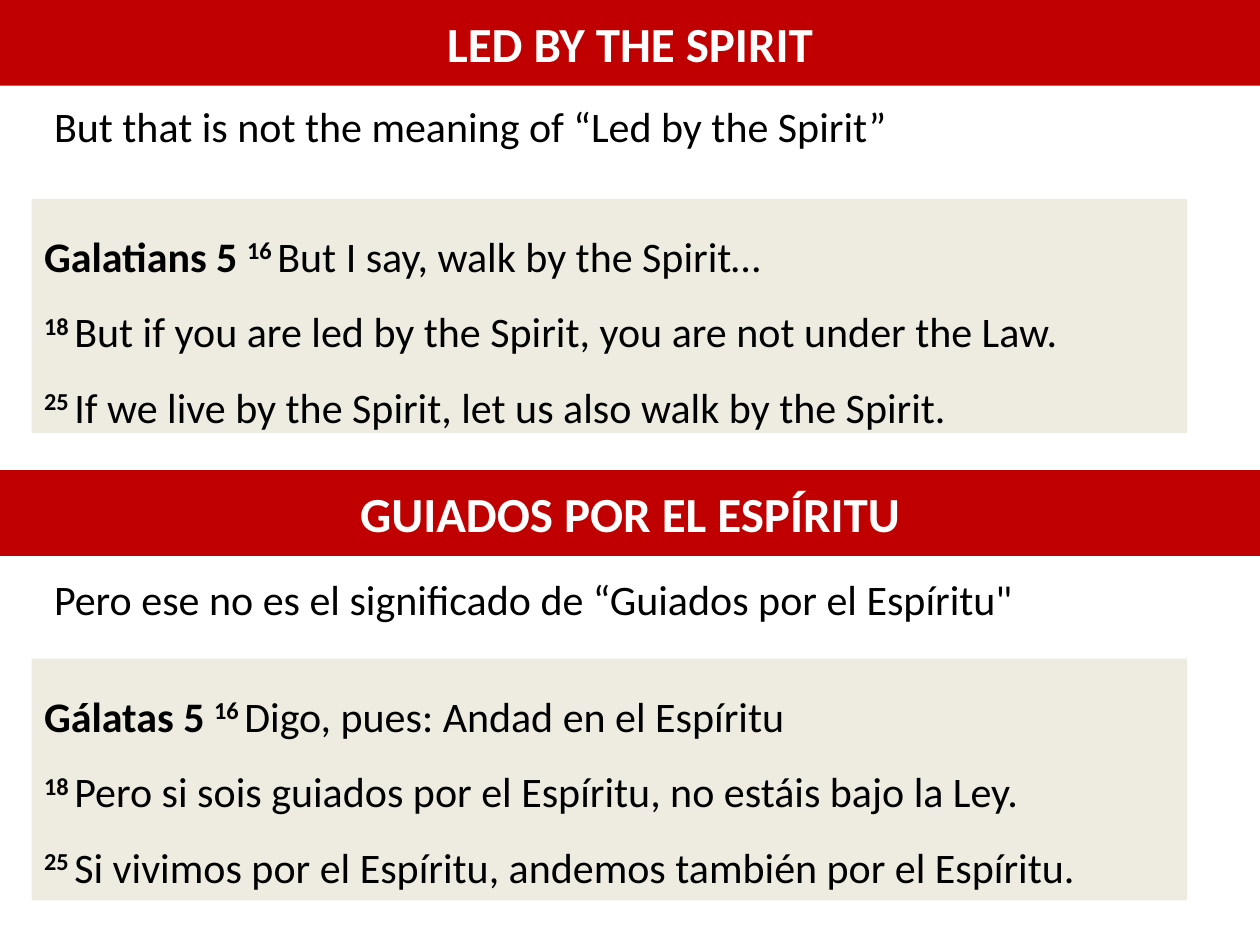
from pptx import Presentation
from pptx.dml.color import RGBColor
from pptx.enum.shapes import MSO_SHAPE
from pptx.enum.text import MSO_ANCHOR, PP_ALIGN
from pptx.util import Cm, Pt

RECT = MSO_SHAPE.RECTANGLE
TOP, MIDDLE = MSO_ANCHOR.TOP, MSO_ANCHOR.MIDDLE
LEFT, CENTER = PP_ALIGN.LEFT, PP_ALIGN.CENTER

COLORS = {"band": "C00000", "panel": "EEECE1", "light": "FFFFFF", "dark": "000000"}
FONT = "Calibri"
WIDTH, HEIGHT = 25.4, 19.05
BAND = 1.73

PARTS = [
    {
        "title": "LED BY THE SPIRIT",
        "lead": "But that is not the meaning of “Led by the Spirit”",
        "verses": [
            ("Galatians 5 ", "16 ", "But I say, walk by the Spirit…"),
            ("", "18 ", "But if you are led by the Spirit, you are not under the Law."),
            ("", "25 ", "If we live by the Spirit, let us also walk by the Spirit."),
        ],
        "top": 0, "lead_box": (1.9, 22.5), "panel": (4.01, 4.72),
    },
    {
        "title": "GUIADOS POR EL ESPÍRITU",
        "lead": "Pero ese no es el significado de “Guiados por el Espíritu\"",
        "verses": [
            ("Gálatas 5 ", "16 ", "Digo, pues: Andad en el Espíritu"),
            ("", "18 ", "Pero si sois guiados por el Espíritu, no estáis bajo la Ley."),
            ("", "25 ", "Si vivimos por el Espíritu, andemos también por el Espíritu."),
        ],
        "top": 9.48, "lead_box": (11.43, 20.95), "panel": (13.28, 4.87),
    },
]


def color(name):
    return RGBColor.from_string(COLORS[name])


def style(para, size, ink, align=LEFT):
    para.alignment = align
    para.font.name = FONT
    para.font.size = Pt(size)
    para.font.color.rgb = color(ink)


def add_rect(slide, box, fill, anchor):
    shape = slide.shapes.add_shape(RECT, *map(Cm, box))
    shape.shadow.inherit = False
    shape.fill.solid()
    shape.fill.fore_color.rgb = color(fill)
    shape.line.fill.background()
    frame = shape.text_frame
    frame.word_wrap = True
    frame.vertical_anchor = anchor
    return frame


def add_title(slide, text, top):
    para = add_rect(slide, (0, top, WIDTH, BAND), "band", MIDDLE).paragraphs[0]
    para.text = text
    style(para, 28, "light", CENTER)
    para.font.bold = True


def add_lead(slide, text, top, width):
    box = slide.shapes.add_textbox(Cm(0.84), Cm(top), Cm(width), Cm(1.27))
    frame = box.text_frame
    frame.word_wrap = True
    frame.text = text
    style(frame.paragraphs[0], 24, "dark")


def add_verses(slide, verses, top, height):
    frame = add_rect(slide, (0.64, top, 23.29, height), "panel", TOP)
    for i, (book, number, text) in enumerate(verses):
        para = frame.add_paragraph() if i else frame.paragraphs[0]
        style(para, 24, "dark")
        para.line_spacing = 1.5
        if book:
            para.add_run().text = book
            para.runs[0].font.bold = True
        mark = para.add_run()
        mark.text = number
        mark.font.bold = True
        mark._r.get_or_add_rPr().set("baseline", "30000")
        para.add_run().text = text


def main():
    deck = Presentation()
    deck.slide_width, deck.slide_height = Cm(WIDTH), Cm(HEIGHT)
    slide = deck.slides.add_slide(deck.slide_layouts[6])
    for part in PARTS:
        add_title(slide, part["title"], part["top"])
        add_lead(slide, part["lead"], *part["lead_box"])
        add_verses(slide, part["verses"], *part["panel"])
    deck.save("out.pptx")


if __name__ == "__main__":
    main()
